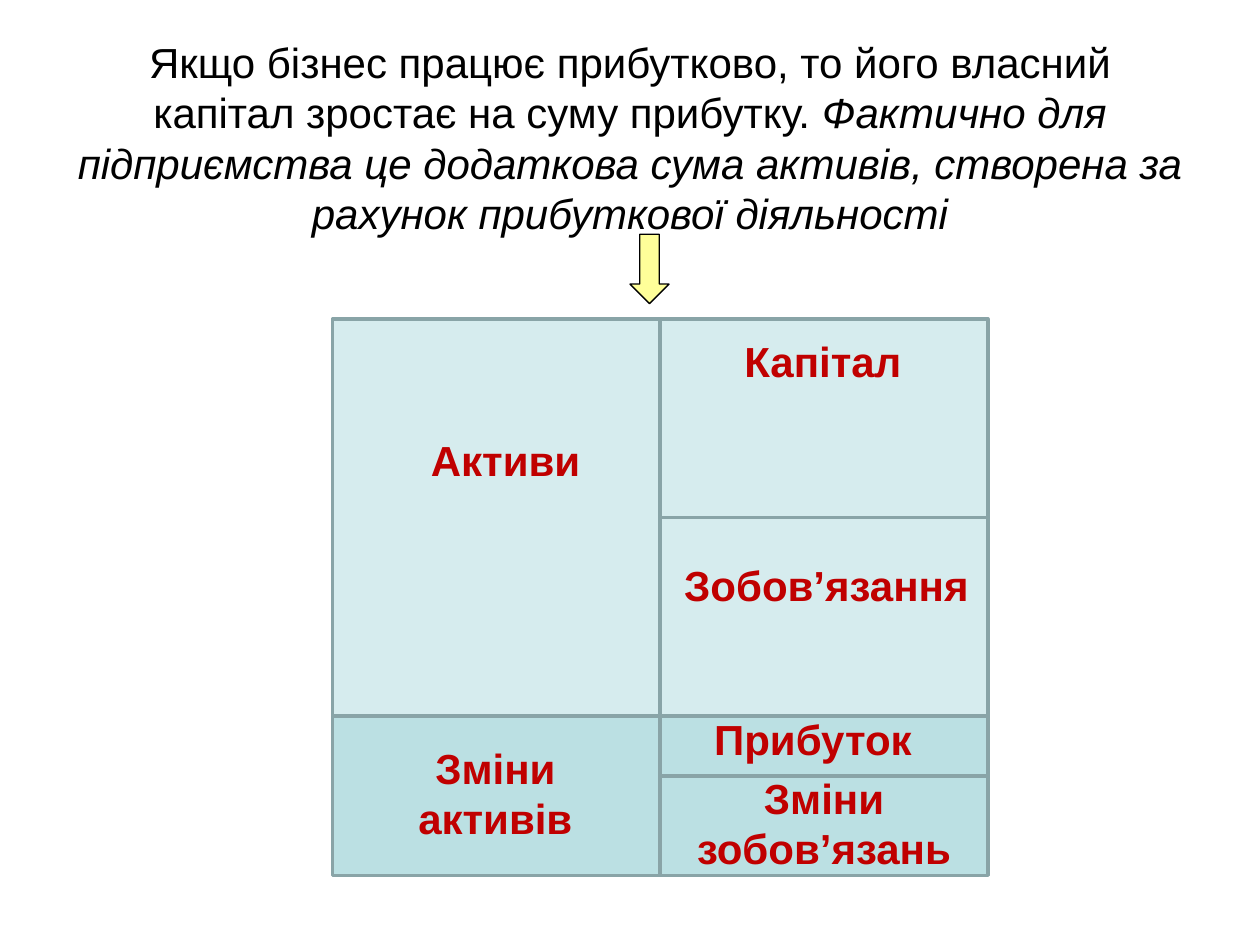
"""Build a slide showing how profit increases the two sides of a balance sheet."""
from typing import NamedTuple

from pptx import Presentation
from pptx.dml.color import RGBColor
from pptx.enum.shapes import MSO_SHAPE
from pptx.enum.text import MSO_ANCHOR, MSO_AUTO_SIZE, PP_ALIGN
from pptx.util import Pt

RECT = MSO_SHAPE.RECTANGLE
DOWN_ARROW = MSO_SHAPE.DOWN_ARROW
CENTER = PP_ALIGN.CENTER
TOP_ANCHOR = MSO_ANCHOR.TOP
NO_AUTOFIT = MSO_AUTO_SIZE.NONE

PALE = RGBColor(0xD6, 0xEC, 0xEE)
TEAL = RGBColor(0xBB, 0xE0, 0xE3)
BORDER = RGBColor(0x89, 0xA4, 0xA7)
RED = RGBColor(0xC0, 0x00, 0x00)
BLACK = RGBColor(0x00, 0x00, 0x00)
YELLOW = RGBColor(0xFF, 0xFF, 0x99)

COL_W = 187.2
ASSETS_X = 190.1
SOURCES_X = ASSETS_X + COL_W
TOP = 182.3
HALF_H = 113.5
CHANGE_Y = TOP + 2 * HALF_H
PROFIT_H = 34
DEBT_CHANGE_H = 56.9

FRAME = {"word_wrap": True, "auto_size": NO_AUTOFIT, "vertical_anchor": TOP_ANCHOR,
         "margin_left": Pt(7.2), "margin_right": Pt(7.2),
         "margin_top": Pt(3.6), "margin_bottom": Pt(3.6)}
TITLE_FONT = {"name": "Arial", "size": Pt(24), "bold": False}
LABEL_FONT = {"name": "Arial", "size": Pt(24), "bold": True}


class Box(NamedTuple):
    left: float
    top: float
    width: float
    height: float


class Block(NamedTuple):
    box: Box
    fill: RGBColor


class Label(NamedTuple):
    text: str
    box: Box


BLOCKS = [
    Block(Box(ASSETS_X, TOP, COL_W, 2 * HALF_H), PALE),
    Block(Box(SOURCES_X, TOP, COL_W, HALF_H), PALE),
    Block(Box(SOURCES_X, TOP + HALF_H, COL_W, HALF_H), PALE),
    Block(Box(ASSETS_X, CHANGE_Y, COL_W, PROFIT_H + DEBT_CHANGE_H), TEAL),
    Block(Box(SOURCES_X, CHANGE_Y + PROFIT_H, COL_W, DEBT_CHANGE_H), TEAL),
    Block(Box(SOURCES_X, CHANGE_Y, COL_W, PROFIT_H), TEAL),
]
LABELS = [
    Label("Активи", Box(212.4, 244.8, 153, 36)),
    Label("Зобов’язання", Box(370, 316.1, 204.5, 36)),
    Label("Капітал", Box(393.8, 187.9, 153, 36)),
    Label("Зміни активів", Box(206.6, 420.5, 153, 65)),
    Label("Зміни зобов’язань", Box(SOURCES_X, 437.8, COL_W, 65)),
    Label("Прибуток", Box(388.1, 403.9, 153, 36)),
]
TITLE_BOX = Box(36.7, 17.3, 646.6, 122.4)
ARROW_BOX = Box(360, 133.9, 22.3, 39.6)
TITLE_RUNS = [
    ("Якщо бізнес працює прибутково, то його власний капітал зростає на суму прибутку. ", False),
    ("Фактично для підприємства це додаткова сума активів, створена за рахунок "
     "прибуткової діяльності", True),
]


def set_format(obj, values: dict) -> None:
    """Set each named attribute on the object."""
    for name, value in values.items():
        setattr(obj, name, value)


def add_run(p, text: str, color: RGBColor, font: dict) -> None:
    """Append one formatted run to a paragraph."""
    r = p.add_run()
    r.text = text
    set_format(r.font, font)
    r.font.color.rgb = color


def add_shape(slide, kind, box: Box, fill: RGBColor, line: RGBColor, weight: float) -> None:
    """Draw a filled and outlined preset shape."""
    sp = slide.shapes.add_shape(kind, *map(Pt, box))
    sp.shadow.inherit = False
    sp.fill.solid()
    sp.fill.fore_color.rgb = fill
    sp.line.color.rgb = line
    sp.line.width = Pt(weight)


def add_label(slide, label: Label) -> None:
    """Add a centred red caption."""
    tf = slide.shapes.add_textbox(*map(Pt, label.box)).text_frame
    set_format(tf, FRAME)
    p = tf.paragraphs[0]
    p.alignment = CENTER
    add_run(p, label.text, RED, LABEL_FONT)


def set_title(slide) -> None:
    """Place the title and fill it with its plain and italic parts."""
    sp = slide.shapes.title
    set_format(sp, dict(zip(Box._fields, map(Pt, TITLE_BOX))))
    set_format(sp.text_frame, FRAME)
    p = sp.text_frame.paragraphs[0]
    p.alignment = CENTER
    for text, italic in TITLE_RUNS:
        add_run(p, text, BLACK, {**TITLE_FONT, "italic": italic})


def main() -> None:
    """Build and save the presentation."""
    prs = Presentation()
    prs.slide_width, prs.slide_height = Pt(720), Pt(540)
    slide = prs.slides.add_slide(prs.slide_layouts.get_by_name("Title Only"))
    set_title(slide)
    for block in BLOCKS:
        add_shape(slide, RECT, block.box, block.fill, BORDER, 2)
    for label in LABELS:
        add_label(slide, label)
    add_shape(slide, DOWN_ARROW, ARROW_BOX, YELLOW, BLACK, 0.75)
    prs.save("out.pptx")


if __name__ == "__main__":
    main()
